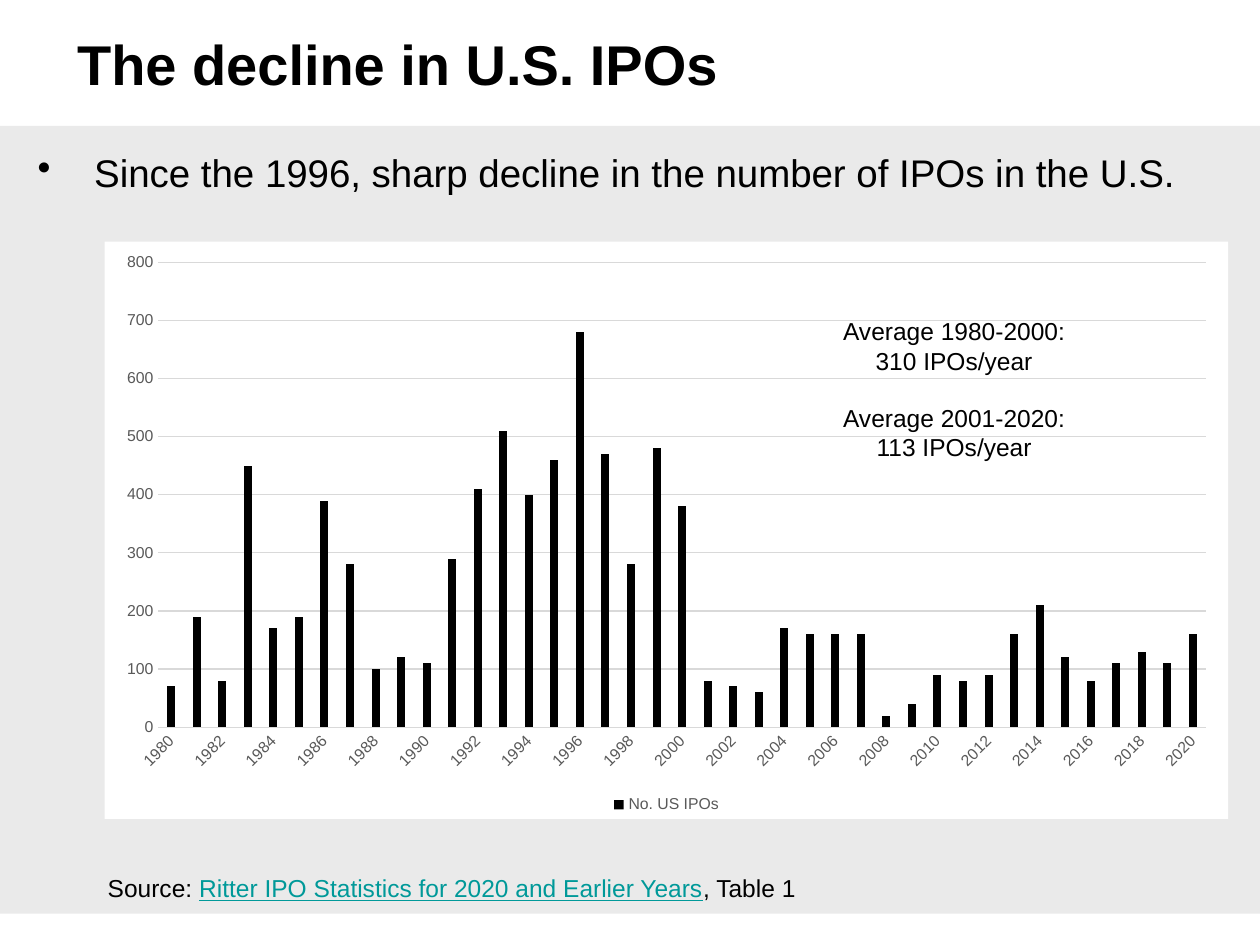
import pptx
import pptx.chart.data
import pptx.dml.color
import pptx.enum.chart
import pptx.enum.shapes
import pptx.enum.text
import pptx.oxml
import pptx.oxml.ns
import pptx.util
from pptx.util import Cm

FONT = "Arial"
BLACK, GREY, GRID, PANEL, WHITE, LINK = "000000", "595959", "D9D9D9", "EAEAEA", "FFFFFF", "009999"
ALIGN = pptx.enum.text.PP_ALIGN
ANCHOR = pptx.enum.text.MSO_ANCHOR
FIT = pptx.enum.text.MSO_AUTO_SIZE
NAMESPACES = pptx.oxml.ns.nsdecls("a", "c")
FIRST_YEAR = 1980
IPO_COUNTS = [
    70, 190, 80, 450, 170, 190, 390, 280, 100, 120, 110, 290, 410, 510,
    400, 460, 680, 470, 280, 480, 380, 80, 70, 60, 170, 160, 160, 160,
    20, 40, 90, 80, 90, 160, 210, 120, 80, 110, 130, 110, 160,
]


def colour(value):
    """Return the colour for a hex string."""
    return pptx.dml.color.RGBColor.from_string(value)


def assign(target, values):
    """Set each attribute in values on target."""
    for name, value in values.items():
        setattr(target, name, value)


def style_font(font, size, hex_colour=BLACK, **extra):
    """Give a font its face, size, colour and any extra format."""
    assign(font, {"name": FONT, "size": pptx.util.Pt(size), **extra})
    font.color.rgb = colour(hex_colour)


def add_run(paragraph, text, size, hex_colour=BLACK, **extra):
    """Append formatted text to a paragraph."""
    run = paragraph.add_run()
    run.text = text
    style_font(run.font, size, hex_colour, **extra)


def indent(paragraph, left, first=0):
    """Set the left margin and first-line indent of a paragraph."""
    properties = paragraph._p.get_or_add_pPr()
    properties.set("marL", str(Cm(left)))
    properties.set("indent", str(Cm(first)))
    return properties


def add_title(slide, text):
    """Place and format the slide title."""
    title = slide.shapes.title
    assign(title, {"left": Cm(0), "top": Cm(0), "width": Cm(25.4), "height": Cm(2.54)})
    assign(title.text_frame, {"vertical_anchor": ANCHOR.MIDDLE, "auto_size": FIT.NONE})
    paragraph = title.text_frame.paragraphs[0]
    paragraph.alignment = ALIGN.LEFT
    indent(paragraph, 1.3)
    add_run(paragraph, text, 32, bold=True)


def add_panel(slide, text):
    """Add the grey panel with its bulleted statement."""
    panel = slide.shapes.add_shape(
        pptx.enum.shapes.MSO_SHAPE.RECTANGLE, Cm(0), Cm(2.54), Cm(25.4), Cm(15.88))
    panel.shadow.inherit = False
    panel.fill.solid()
    panel.fill.fore_color.rgb = colour(PANEL)
    panel.line.fill.background()
    assign(panel.text_frame, {
        "word_wrap": True, "vertical_anchor": ANCHOR.TOP,
        "margin_left": Cm(0.25), "margin_top": Cm(0.47),
        "margin_right": Cm(0.5), "margin_bottom": Cm(0.13)})
    statement = panel.text_frame.paragraphs[0]
    statement.alignment = ALIGN.LEFT
    properties = indent(statement, 1.65, -1.14)
    properties.append(pptx.oxml.parse_xml(f'<a:buChar {NAMESPACES} char="•"/>'))
    add_run(statement, text, 22)


def style_axis(axis, line_colour=None):
    """Format the labels and line of a chart axis."""
    tick_mark = pptx.enum.chart.XL_TICK_MARK.NONE
    assign(axis, {"major_tick_mark": tick_mark, "minor_tick_mark": tick_mark})
    style_font(axis.tick_labels.font, 9, GREY)
    if line_colour:
        style_line(axis.format.line, line_colour)
    else:
        axis.format.line.fill.background()


def style_line(line, hex_colour):
    """Give a chart line its colour and width."""
    line.color.rgb = colour(hex_colour)
    line.width = pptx.util.Pt(0.75)


def fill_chart_area(chart, hex_colour):
    """Fill the chart area and leave out its border."""
    area = pptx.oxml.parse_xml(
        f'<c:spPr {NAMESPACES}><a:solidFill><a:srgbClr val="{hex_colour}"/></a:solidFill>'
        '<a:ln><a:noFill/></a:ln></c:spPr>')
    chart._chartSpace.find(pptx.oxml.ns.qn("c:chart")).addnext(area)


def add_ipo_chart(slide):
    """Add the column chart of yearly IPO counts."""
    data = pptx.chart.data.CategoryChartData()
    data.categories = [str(FIRST_YEAR + offset) for offset in range(len(IPO_COUNTS))]
    data.add_series("No. US IPOs", IPO_COUNTS)
    chart = slide.shapes.add_chart(
        pptx.enum.chart.XL_CHART_TYPE.COLUMN_CLUSTERED,
        Cm(2.11), Cm(4.87), Cm(22.65), Cm(11.64), data).chart
    style_font(chart.font, 10)
    fill_chart_area(chart, WHITE)
    assign(chart, {"has_title": False, "has_legend": True})
    assign(chart.legend, {
        "position": pptx.enum.chart.XL_LEGEND_POSITION.BOTTOM, "include_in_layout": False})
    style_font(chart.legend.font, 9, GREY)

    plot = chart.plots[0]
    assign(plot, {"gap_width": 219, "overlap": -27, "vary_by_categories": False})
    columns = plot.series[0].format.fill
    columns.solid()
    columns.fore_color.rgb = colour(BLACK)

    years, counts = chart.category_axis, chart.value_axis
    style_axis(years, GRID)
    style_axis(counts)
    assign(counts, {"minimum_scale": 0, "maximum_scale": 800, "major_unit": 100})
    style_line(counts.major_gridlines.format.line, GRID)
    years._element.find(".//" + pptx.oxml.ns.qn("a:bodyPr")).set("rot", "-2700000")
    years._element.find(pptx.oxml.ns.qn("c:noMultiLvlLbl")).addprevious(
        pptx.oxml.parse_xml(f'<c:tickLblSkip {NAMESPACES} val="2"/>'))


def add_note(slide, position, paragraphs, gap=0):
    """Add a centred text box; each paragraph is a list of (text, format)."""
    frame = slide.shapes.add_textbox(*map(Cm, position)).text_frame
    assign(frame, {"word_wrap": True, "auto_size": FIT.SHAPE_TO_FIT_TEXT})
    for index, runs in enumerate(paragraphs):
        paragraph = frame.add_paragraph() if index else frame.paragraphs[0]
        paragraph.alignment = ALIGN.CENTER
        if index:
            paragraph.space_before = pptx.util.Pt(gap)
        for text, extra in runs:
            add_run(paragraph, text, 14, **extra)


def main():
    """Build and save the slide."""
    deck = pptx.Presentation()
    assign(deck, {"slide_width": Cm(25.4), "slide_height": Cm(19.05)})
    slide = deck.slides.add_slide(deck.slide_layouts[5])
    add_title(slide, "The decline in U.S. IPOs")
    add_panel(slide, "Since the 1996, sharp decline in the number of IPOs in the U.S.")
    add_ipo_chart(slide)
    add_note(slide, (1.27, 17.48, 15.67, 0.86), [[
        ("Source: ", {}),
        ("Ritter IPO Statistics for 2020 and Earlier Years",
         {"hex_colour": LINK, "underline": True}),
        (", Table 1", {})]])
    add_note(slide, (16.48, 6.25, 5.51, 3.84), [
        [("Average 1980-2000: 310 IPOs/year", {})],
        [("Average 2001-2020: 113 IPOs/year", {})]], gap=16)
    deck.save("out.pptx")


if __name__ == "__main__":
    main()
